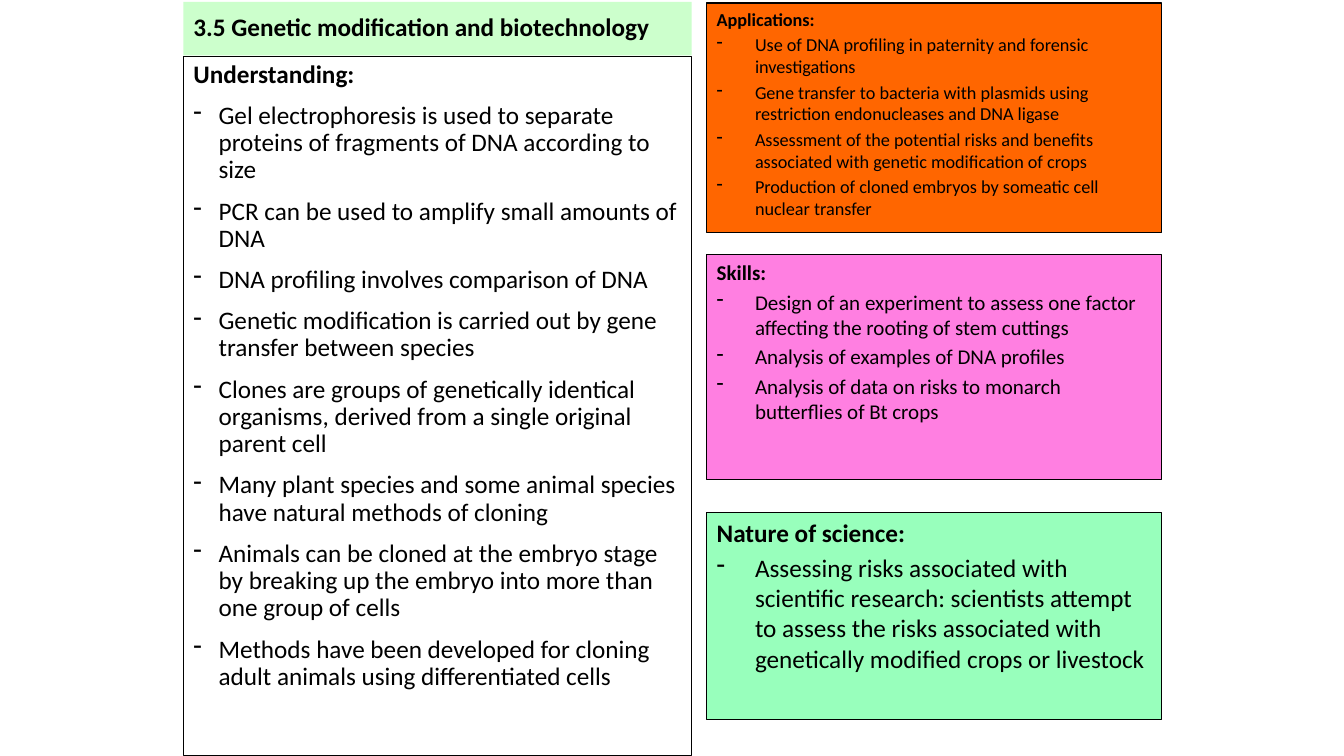
from lxml import etree
from pptx import Presentation
from pptx import util as u
from pptx.dml.color import RGBColor
from pptx.enum import shapes, text
from pptx.oxml.ns import qn


def color(hex_string):
    return RGBColor.from_string(hex_string)


def add_panel(slide, box, fill, line, size, heading, points=(), indent=0.38,
              spacing=1.0, before=None, anchor=text.MSO_ANCHOR.TOP):
    """Draw a box with a bold heading and dash-bulleted points."""
    sp = slide.shapes.add_shape(shapes.MSO_SHAPE.RECTANGLE, *map(u.Inches, box))
    sp.shadow.inherit = False
    if fill:
        sp.fill.solid()
        sp.fill.fore_color.rgb = color(fill)
    else:
        sp.fill.background()
    if line:
        sp.line.color.rgb = color(line)
        sp.line.width = u.Pt(0.75)
    else:
        sp.line.fill.background()

    tf = sp.text_frame
    tf.word_wrap = True
    tf.vertical_anchor = anchor
    for i, content in enumerate([heading, *points]):
        p = tf.paragraphs[0] if i == 0 else tf.add_paragraph()
        p.alignment = text.PP_ALIGN.LEFT
        p.line_spacing = spacing
        p.space_before = u.Pt(size * 0.2 if before is None else before)
        if i > 0:
            pPr = p._p.get_or_add_pPr()
            pPr.set("marL", str(u.Inches(indent)))
            pPr.set("indent", str(-u.Inches(indent)))
            etree.SubElement(pPr, qn("a:buChar"), char="-")
        r = p.add_run()
        r.text = content
        r.font.name = "Calibri"
        r.font.size = u.Pt(size)
        r.font.bold = i == 0
        r.font.color.rgb = color("000000")


prs = Presentation()
prs.slide_width = u.Inches(13.33)
prs.slide_height = u.Inches(7.5)
s = prs.slides.add_slide(prs.slide_layouts[6])

# Left column: topic title and understandings
add_panel(s, (1.82, 0.02, 5.04, 0.53), "CCFFCC", None, 18,
          "3.5 Genetic modification and biotechnology",
          spacing=0.9, before=0, anchor=text.MSO_ANCHOR.MIDDLE)

understandings = [
    "Gel electrophoresis is used to separate proteins of fragments of DNA according to size",
    "PCR can be used to amplify small amounts of DNA",
    "DNA profiling involves comparison of DNA",
    "Genetic modification is carried out by gene transfer between species",
    "Clones are groups of genetically identical organisms, derived from a single original parent cell",
    "Many plant species and some animal species have natural methods of cloning",
    "Animals can be cloned at the embryo stage by breaking up the embryo into more than one group of cells",
    "Methods have been developed for cloning adult animals using differentiated cells",
]
add_panel(s, (1.82, 0.56, 5.04, 6.94), None, "000000", 18, "Understanding:",
          understandings, indent=0.25, spacing=0.9, before=10)

# Right column: top, height, fill, text size, heading, points
side_panels = [
    (0.03, 2.28, "FF6600", 13, "Applications:", [
        "Use of DNA profiling in paternity and forensic investigations",
        "Gene transfer to bacteria with plasmids using restriction endonucleases and DNA ligase",
        "Assessment of the potential risks and benefits associated with genetic modification of crops",
        "Production of cloned embryos by someatic cell nuclear transfer",
    ]),
    (2.53, 2.23, "FF7FE1", 15, "Skills:", [
        "Design of an experiment to assess one factor affecting the rooting of stem cuttings",
        "Analysis of examples of DNA profiles",
        "Analysis of data on risks to monarch butterflies of Bt crops",
    ]),
    (5.08, 2.06, "98FFBC", 18, "Nature of science:", [
        "Assessing risks associated with scientific research: scientists attempt to assess "
        "the risks associated with genetically modified crops or livestock",
    ]),
]
for top, height, fill, size, heading, points in side_panels:
    add_panel(s, (7.01, top, 4.51, height), fill, "000000", size, heading, points)

prs.save("out.pptx")
